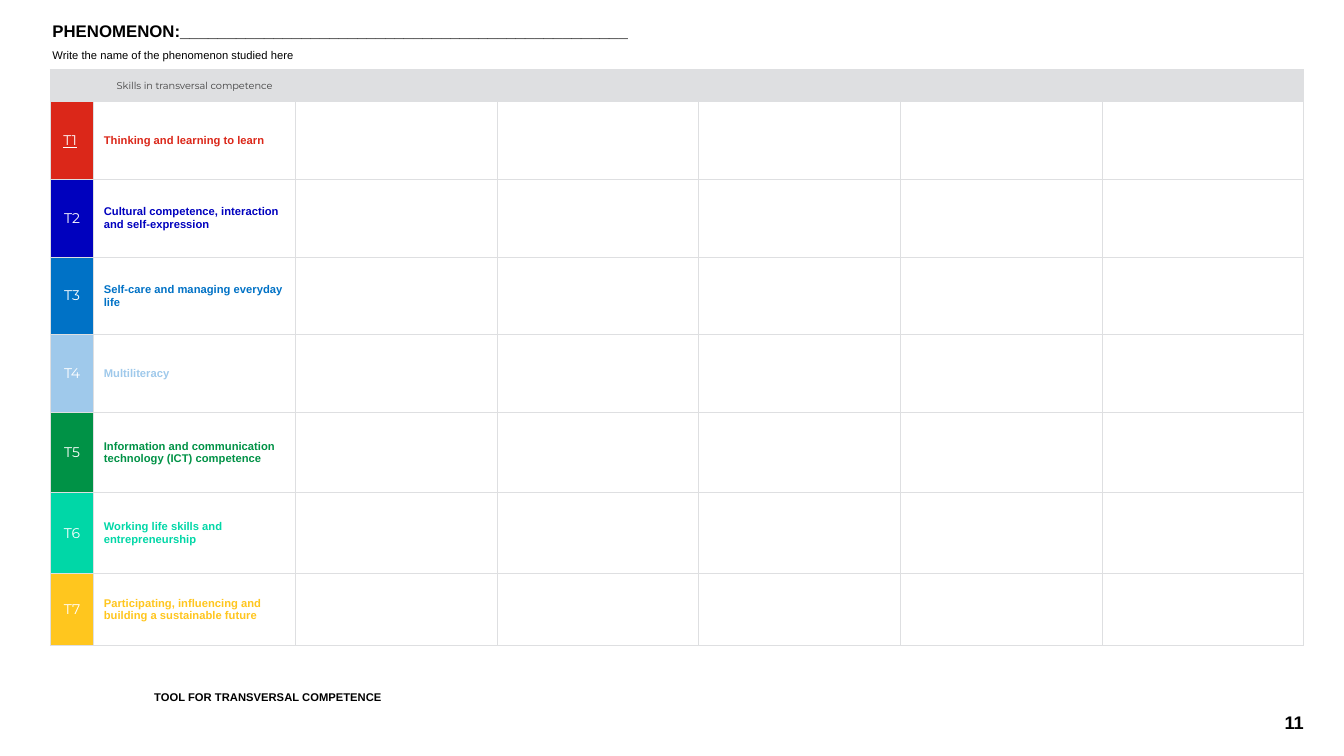
from lxml import etree
from pptx import Presentation, util as u
from pptx.dml.color import RGBColor
from pptx.enum import text as t
from pptx.oxml.ns import qn

GREY = "DEDFE1"
WHITE = "FFFFFF"
COMPETENCES = [
    ("T1", "Thinking and learning to learn", "DB2719", 0.77),
    ("T2", "Cultural competence, interaction and self-expression", "0001BE", 0.77),
    ("T3", "Self-care and managing everyday life", "0072C6", 0.77),
    ("T4", "Multiliteracy", "9FC9EB", 0.77),
    ("T5", "Information and communication technology (ICT) competence", "009246", 0.8),
    ("T6", "Working life skills and entrepreneurship", "00D7A7", 0.8),
    ("T7", "Participating, influencing and building a sustainable future", "FFC61E", 0.72),
]
COLUMN_WIDTHS = [0.43] + [2] * 6
HEADER_HEIGHT = 0.32


def color(value):
    return RGBColor.from_string(value)


def write(paragraph, words, size=8, font="Arial", fill="000000", bold=False,
          underline=False, align=t.PP_ALIGN.LEFT, spacing=None, before=None):
    paragraph.alignment = align
    if spacing:
        paragraph.line_spacing = spacing
    if before:
        paragraph.space_before = u.Pt(before)
    run = paragraph.add_run()
    run.text = words
    run.font.size = u.Pt(size)
    run.font.name = font
    run.font.bold = bold
    run.font.underline = underline
    run.font.color.rgb = color(fill)


def add_frame(slide, box, inset=0.0, anchor=t.MSO_ANCHOR.TOP):
    frame = slide.shapes.add_textbox(*map(u.Inches, box)).text_frame
    frame.word_wrap = True
    frame.vertical_anchor = anchor
    frame.margin_left = u.Inches(inset)
    frame.margin_right = frame.margin_top = frame.margin_bottom = 0
    return frame


def style_cell(cell, fill=None, margin=0.0, anchor=t.MSO_ANCHOR.MIDDLE):
    cell.margin_left = cell.margin_right = u.Inches(margin)
    cell.margin_top = cell.margin_bottom = u.Inches(margin)
    cell.vertical_anchor = anchor
    properties = cell._tc.get_or_add_tcPr()
    for side in ("a:lnL", "a:lnR", "a:lnT", "a:lnB"):
        border = etree.SubElement(properties, qn(side), w=str(u.Pt(0.75)))
        solid = etree.SubElement(border, qn("a:solidFill"))
        etree.SubElement(solid, qn("a:srgbClr"), val=GREY)
    if fill:
        cell.fill.solid()
        cell.fill.fore_color.rgb = color(fill)
    else:
        cell.fill.background()
    return cell.text_frame.paragraphs[0]


def add_heading(slide, box):
    frame = add_frame(slide, box, inset=0.02)
    write(frame.paragraphs[0], "PHENOMENON:________________________________________________",
          size=12, bold=True, spacing=0.9)
    write(frame.add_paragraph(), "Write the name of the phenomenon studied here",
          spacing=0.9, before=6)


def add_competence_table(slide, box):
    table = slide.shapes.add_table(len(COMPETENCES) + 1, len(COLUMN_WIDTHS),
                                   *map(u.Inches, box)).table
    table.first_row = table.horz_banding = False
    for column, width in zip(table.columns, COLUMN_WIDTHS):
        column.width = u.Inches(width)
    heights = [HEADER_HEIGHT] + [competence[3] for competence in COMPETENCES]
    for row, height in zip(table.rows, heights):
        row.height = u.Inches(height)

    for index in range(len(COLUMN_WIDTHS)):
        is_title = index == 1
        heading = style_cell(table.cell(0, index), GREY, 0.1 if is_title else 0,
                             t.MSO_ANCHOR.TOP)
        if is_title:
            write(heading, "Skills in transversal competence", size=7,
                  font="Montserrat", fill="434343", align=t.PP_ALIGN.CENTER)

    for row, (code, skill, hue, height) in enumerate(COMPETENCES, start=1):
        label = style_cell(table.cell(row, 0), hue, 0.1)
        code_format = dict(size=10, font="Montserrat", fill=WHITE, align=t.PP_ALIGN.CENTER)
        write(label, code, underline=code == "T1", **code_format)
        if code == "T1":
            write(label, " ", **code_format)
        write(style_cell(table.cell(row, 1), margin=0.1), skill, fill=hue, bold=True)
        for index in range(2, len(COLUMN_WIDTHS)):
            style_cell(table.cell(row, index))


def add_footer(slide, box):
    frame = add_frame(slide, box, inset=0.02)
    write(frame.paragraphs[0], "TOOL FOR TRANSVERSAL COMPETENCE", bold=True, spacing=0.9)


def add_page_number(slide, box):
    frame = add_frame(slide, box, anchor=t.MSO_ANCHOR.MIDDLE)
    write(frame.paragraphs[0], "11", size=13, bold=True, align=t.PP_ALIGN.RIGHT)


def main():
    deck = Presentation()
    deck.slide_width = u.Inches(13.33)
    deck.slide_height = u.Inches(7.5)
    slide = deck.slides.add_slide(deck.slide_layouts[6])
    add_competence_table(slide, (0.5, 0.69, 12.43, 5.72))
    add_heading(slide, (0.5, 0.23, 6.12, 0.35))
    add_footer(slide, (1.51, 6.86, 4.1, 0.22))
    add_page_number(slide, (11.58, 7.02, 1.35, 0.28))
    deck.save("out.pptx")


if __name__ == "__main__":
    main()
